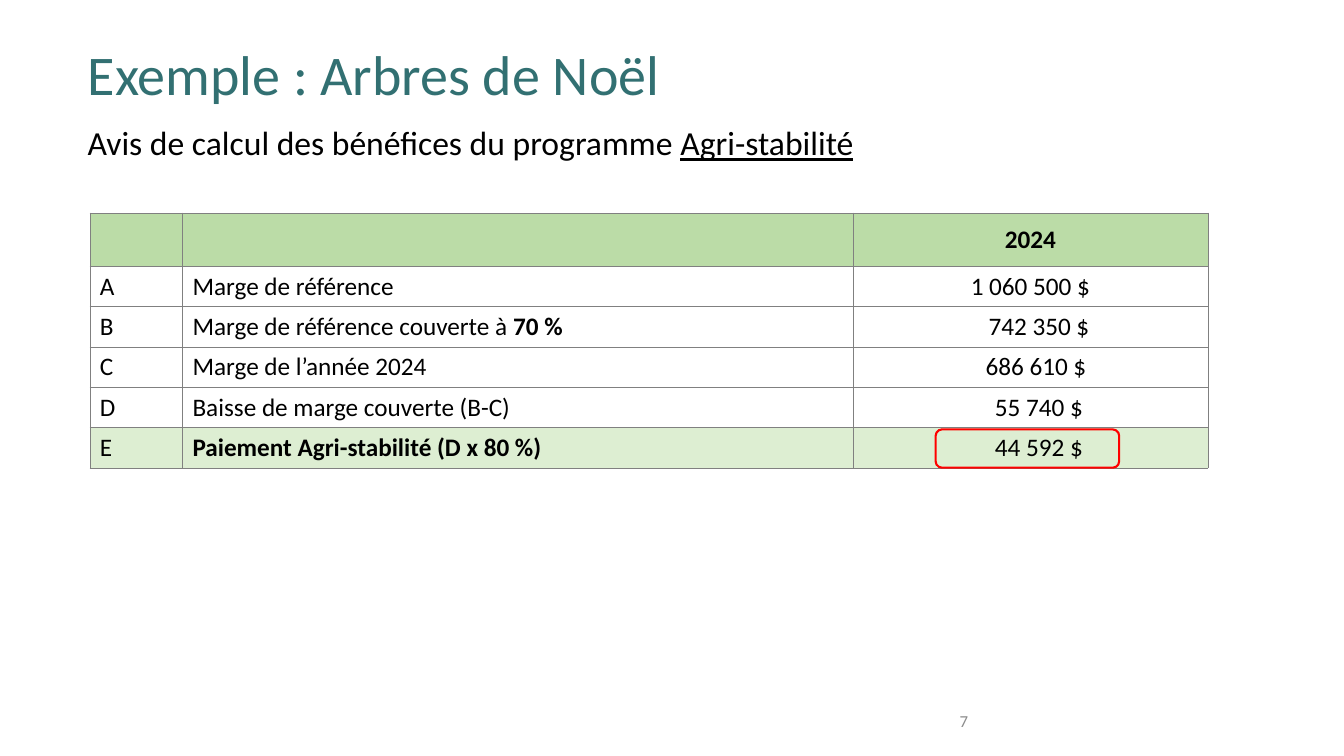
from pptx import Presentation
from pptx.dml.color import RGBColor
from pptx.enum.shapes import MSO_SHAPE
from pptx.enum.text import MSO_ANCHOR, MSO_AUTO_SIZE, PP_ALIGN
from pptx.oxml import parse_xml
from pptx.oxml.ns import nsdecls
from pptx.util import Inches, Pt

TEAL = RGBColor(0x32, 0x70, 0x72)
BLACK = RGBColor(0x00, 0x00, 0x00)
GREY = RGBColor(0x8C, 0x8C, 0x8C)
RULE = RGBColor(0x80, 0x80, 0x80)
GREEN = RGBColor(0xBB, 0xDC, 0xA7)
PALE = RGBColor(0xDD, 0xEE, 0xD2)
RED = RGBColor(0xFF, 0x00, 0x00)
FONT = "Calibri"
WIDE, HIGH = 13.33, 7.5
COLS = (0.92, 6.65, 3.52)
HEAD, ROW = 0.53, 0.4
PAD = 0.1

# Letter, label runs (text, bold), amount, shift of the amount to the right
LINES = [
    ("A", [("Marge de référence", False)], "1 060 500 $", 0),
    ("B", [("Marge de référence couverte à ", False), ("70 %", True)],
     "742 350 $", 0.17),
    ("C", [("Marge de l’année 2024", False)], "686 610 $", 0.11),
    ("D", [("Baisse de marge couverte (B-C)", False)], "55 740 $", 0.17),
    ("E", [("Paiement Agri-stabilité (D x 80 %)", True)], "44 592 $", 0.17),
]


def write(frame, text, size=18, color=BLACK, bold=False, under=False,
          align=PP_ALIGN.LEFT):
    """Add one run to the first paragraph of a text frame."""
    para = frame.paragraphs[0]
    para.alignment = align
    run = para.add_run()
    run.text = text
    font = run.font
    font.name, font.size, font.bold = FONT, Pt(size), bold
    font.underline = under
    font.color.rgb = color
    return para


def place(shape, box):
    shape.left, shape.top, shape.width, shape.height = map(Inches, box)


def add_box(slide, box, anchor=MSO_ANCHOR.TOP):
    frame = slide.shapes.add_textbox(*map(Inches, box)).text_frame
    frame.word_wrap = True
    frame.vertical_anchor = anchor
    return frame


def add_head(slide, box):
    """Title, with the subtitle below it."""
    left, top, width, height = box
    title = slide.shapes.title
    place(title, (left, top, width, height * 0.7))
    frame = title.text_frame
    frame.auto_size = MSO_AUTO_SIZE.NONE
    frame.vertical_anchor = MSO_ANCHOR.TOP
    para = write(frame, "Exemple : Arbres de Noël", size=40, color=TEAL)
    para.line_spacing = 0.9

    frame = add_box(slide, (left, top + height * 0.6, width, height * 0.4))
    write(frame, "Avis de calcul des bénéfices du programme ", size=24)
    write(frame, "Agri-stabilité", size=24, under=True)


def set_cell(cell, runs, fill=None, align=PP_ALIGN.LEFT, shift=0):
    cell.vertical_anchor = MSO_ANCHOR.MIDDLE
    cell.margin_left = Inches(PAD + shift)
    props = cell._tc.get_or_add_tcPr()
    for side in "LRTB":
        props.append(parse_xml(
            f'<a:ln{side} {nsdecls("a")} w="3175"><a:solidFill>'
            f'<a:srgbClr val="{RULE}"/></a:solidFill></a:ln{side}>'))
    if fill is None:
        cell.fill.background()
    else:
        cell.fill.solid()
        cell.fill.fore_color.rgb = fill
    for text, bold in runs:
        write(cell.text_frame, text, bold=bold, align=align)


def add_grid(slide, box):
    """Table of amounts, with the payment ringed in red."""
    left, top, width, height = box
    table = slide.shapes.add_table(
        len(LINES) + 1, len(COLS), *map(Inches, box)).table
    table.horz_banding = False
    for col, size in zip(table.columns, COLS):
        col.width = Inches(size)
    for row in table.rows:
        row.height = Inches(ROW)
    table.rows[0].height = Inches(HEAD)

    for col, runs in enumerate(([], [], [("2024", True)])):
        set_cell(table.cell(0, col), runs, GREEN, PP_ALIGN.CENTER)
    for row, (mark, label, sum_, shift) in enumerate(LINES, 1):
        fill = PALE if row == len(LINES) else None
        set_cell(table.cell(row, 0), [(mark, False)], fill)
        set_cell(table.cell(row, 1), label, fill)
        set_cell(table.cell(row, 2), [(sum_, False)], fill,
                 PP_ALIGN.CENTER, shift)

    # Ring around the last amount
    ring = slide.shapes.add_shape(
        MSO_SHAPE.ROUNDED_RECTANGLE, Inches(left + sum(COLS[:2]) + 0.82),
        Inches(top + height - 0.38), Inches(1.82), Inches(0.38))
    ring.shadow.inherit = False
    ring.fill.background()
    ring.line.color.rgb = RED
    ring.line.width = Pt(1.5)


def add_page(slide, box):
    """Page number."""
    write(add_box(slide, box, MSO_ANCHOR.MIDDLE), "7", size=12, color=GREY)


def main():
    deck = Presentation()
    deck.slide_width, deck.slide_height = Inches(WIDE), Inches(HIGH)
    slide = deck.slides.add_slide(deck.slide_layouts[5])
    add_head(slide, (0.77, 0.42, 11.5, 1.24))
    add_grid(slide, (0.89, 2.11, sum(COLS), HEAD + ROW * len(LINES)))
    add_page(slide, (9.42, 6.95, 3, 0.4))
    deck.save("out.pptx")


if __name__ == "__main__":
    main()
